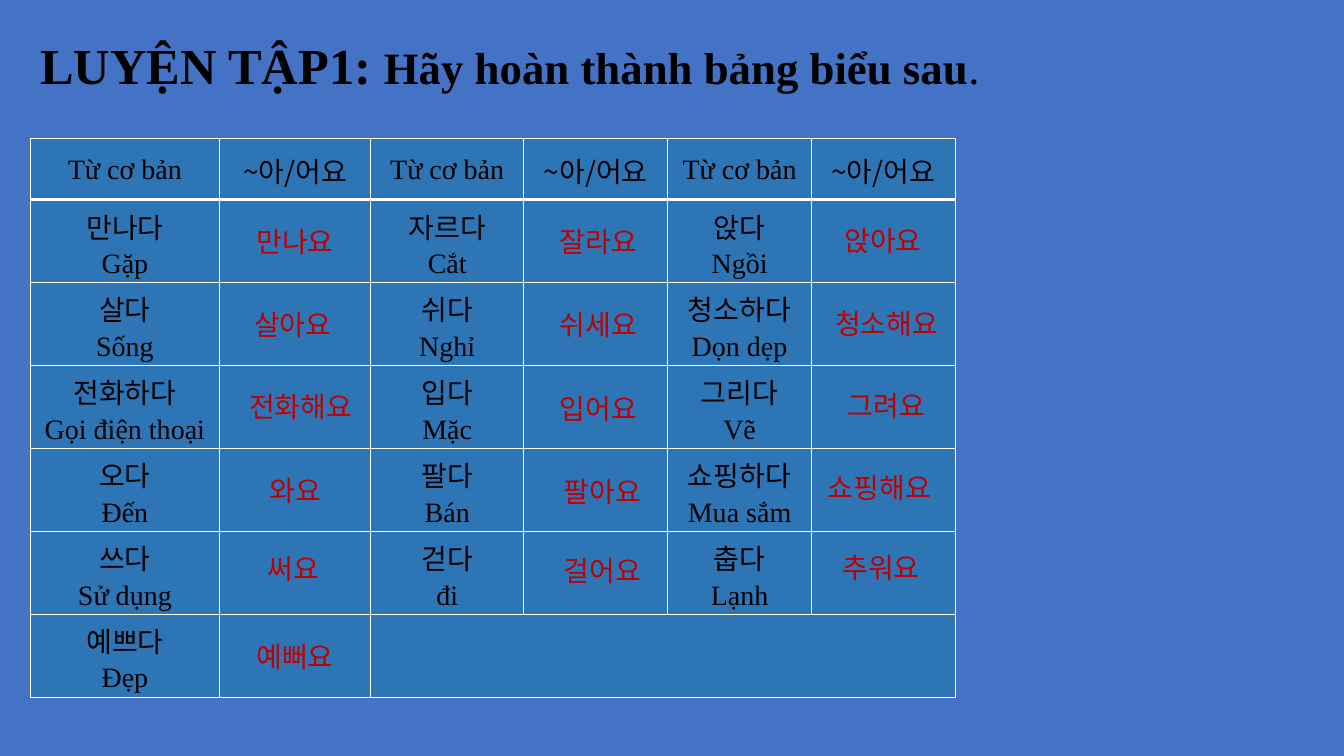
from dataclasses import dataclass
from lxml import etree
from pptx import Presentation
from pptx import util as u
from pptx.dml import color as c
from pptx.enum import text as t
from pptx.oxml import ns


@dataclass(frozen=True)
class Theme:
    back: str = "4472C4"
    cell: str = "2E75B6"
    line: str = "FFFFFF"
    ink: str = "000000"
    mark: str = "C00000"
    latin: str = "Times New Roman"
    hangul: str = "Noto Sans CJK KR"
    head: int = 36
    sub: int = 32
    body: int = 20
    lead: float = 1.07


def px(n):
    return u.Emu(n * 9525)


class Deck:
    def __init__(self, theme):
        self.theme = theme
        self.prs = Presentation()
        self.prs.slide_width, self.prs.slide_height = px(1280), px(720)
        self.slide = self.prs.slides.add_slide(self.prs.slide_layouts[6])
        fill = self.slide.background.fill
        fill.solid()
        fill.fore_color.rgb = c.RGBColor.from_string(theme.back)

    def style(self, run, size, tint, bold=False):
        korean = any(ch >= "가" for ch in run.text)
        font = run.font
        font.name = self.theme.hangul if korean else self.theme.latin
        font.size, font.bold = u.Pt(size), bold
        font.color.rgb = c.RGBColor.from_string(tint)
        east = etree.SubElement(run._r.get_or_add_rPr(), ns.qn("a:ea"))
        east.set("typeface", font.name)

    def box(self, left, top, width, height):
        frame = self.slide.shapes.add_textbox(
            px(left), px(top), px(width), px(height)).text_frame
        frame.word_wrap = False
        frame.auto_size = t.MSO_AUTO_SIZE.SHAPE_TO_FIT_TEXT
        frame.paragraphs[0].line_spacing = self.theme.lead
        return frame

    def title(self, left, top, width, height, parts):
        para = self.box(left, top, width, height).paragraphs[0]
        para.alignment = t.PP_ALIGN.JUSTIFY
        para.space_after = u.Pt(8)
        for words, size, bold in parts:
            run = para.add_run()
            run.text = words
            self.style(run, size, self.theme.ink, bold)

    def answer(self, mid, top, height, word):
        width = 19 + 27 * len(word)
        para = self.box(mid - width // 2, top, width, height).paragraphs[0]
        para.text = word
        para.alignment = t.PP_ALIGN.CENTER
        self.style(para.runs[0], self.theme.body, self.theme.mark)

    def edge(self, cell, side, width):
        line = etree.SubElement(
            cell._tc.get_or_add_tcPr(), ns.qn("a:ln" + side), w=str(int(u.Pt(width))))
        fill = etree.SubElement(line, ns.qn("a:solidFill"))
        etree.SubElement(fill, ns.qn("a:srgbClr"), val=self.theme.line)

    def cell(self, cell, words, row):
        cell.margin_left = cell.margin_right = px(7)
        cell.margin_top = cell.margin_bottom = 0
        cell.vertical_anchor = t.MSO_ANCHOR.MIDDLE
        heavy = {(0, "B"), (1, "T")}
        for side in "LRTB":
            self.edge(cell, side, 3 if (row, side) in heavy else 1)
        cell.fill.solid()
        cell.fill.fore_color.rgb = c.RGBColor.from_string(self.theme.cell)
        cell.text_frame.text = words
        for para in cell.text_frame.paragraphs:
            para.alignment = t.PP_ALIGN.CENTER
            para.line_spacing = self.theme.lead
            for run in para.runs:
                self.style(run, self.theme.body, self.theme.ink)

    def table(self, left, top, cols, rows, data, span):
        table = self.slide.shapes.add_table(
            len(rows), len(cols), px(left), px(top),
            px(sum(cols)), px(sum(rows))).table
        table.horz_banding = False
        for col, width in zip(table.columns, cols):
            col.width = px(width)
        for row, height in zip(table.rows, rows):
            row.height = px(height)
        start, end = span
        table.cell(*start).merge(table.cell(*end))
        for i, line in enumerate(data):
            for j, words in enumerate(line):
                cell = table.cell(i, j)
                if not cell.is_spanned:
                    self.cell(cell, words, i)


WORDS = [
    ["만나다\nGặp", "자르다\nCắt", "앉다\nNgồi"],
    ["살다\nSống", "쉬다\nNghỉ", "청소하다\nDọn dẹp"],
    ["전화하다\nGọi điện thoại", "입다\nMặc", "그리다\nVẽ"],
    ["오다\nĐến", "팔다\nBán", "쇼핑하다\nMua sắm"],
    ["쓰다\nSử dụng", "걷다\nđi", "춥다\nLạnh"],
    ["예쁘다\nĐẹp", "", ""],
]

ANSWERS = [
    (40, [(281, 207, "만나요"), (279, 286, "살아요"), (286, 364, "전화해요"),
          (281, 444, "와요"), (279, 518, "써요"), (281, 602, "예뻐요")]),
    (40, [(570, 207, "잘라요"), (570, 286, "쉬세요"), (570, 366, "입어요"),
          (574, 445, "팔아요"), (574, 520, "걸어요")]),
    (44, [(841, 206, "앉아요"), (844, 285, "청소해요"), (844, 363, "그려요"),
          (837, 441, "쇼핑해요"), (839, 517, "추워요")]),
]


def main():
    theme = Theme()
    deck = Deck(theme)
    deck.title(29, 24, 922, 68, [
        ("LUYỆN TẬP1: ", theme.head, True),
        ("Hãy hoàn thành bảng biểu sau", theme.sub, True),
        (".", theme.sub, False),
    ])
    data = [["Từ cơ bản", "~아/어요"] * 3]
    data += [[cell for word in line for cell in (word, "")] for line in WORDS]
    deck.table(29, 132, [180, 144, 146, 137, 137, 137], [58] + [79] * 6,
               data, ((6, 2), (6, 5)))
    for height, group in ANSWERS:
        for mid, top, word in group:
            deck.answer(mid, top, height, word)
    deck.prs.save("out.pptx")


if __name__ == "__main__":
    main()
